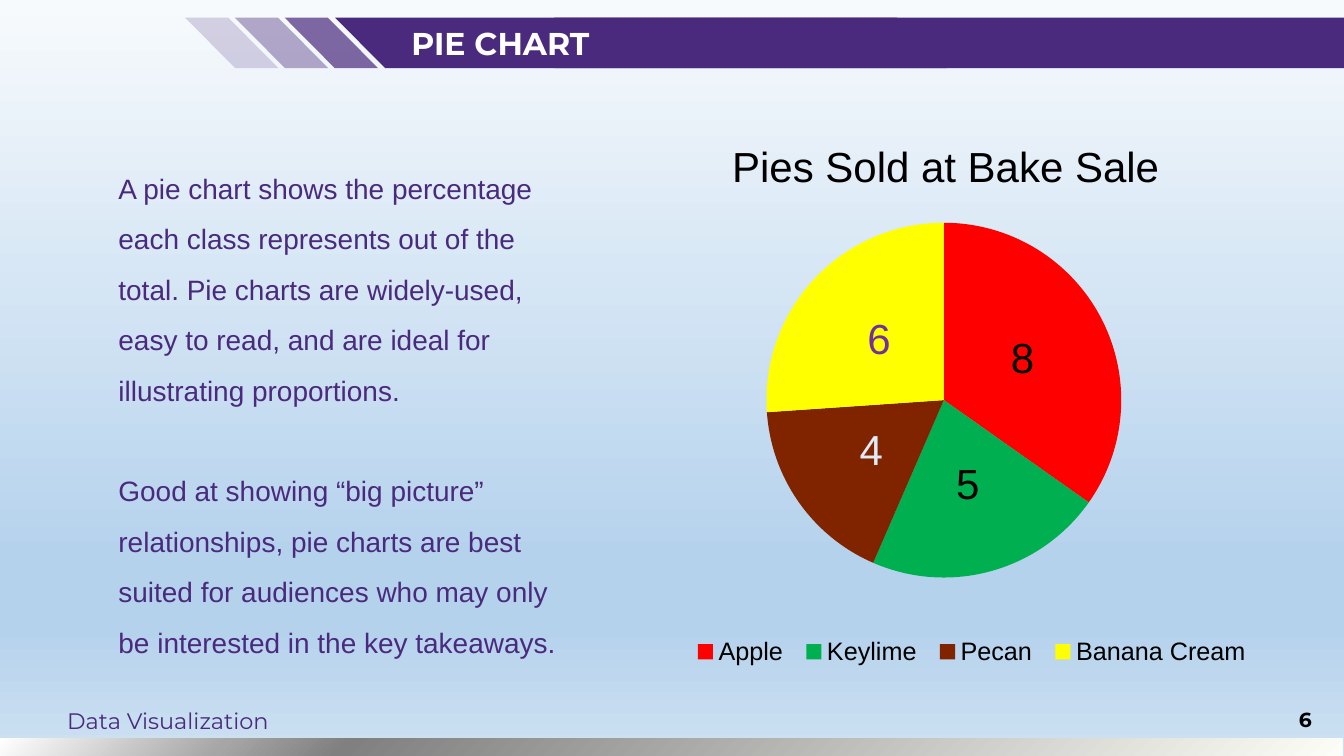
from lxml.etree import SubElement
from pptx import Presentation
from pptx.chart.data import CategoryChartData
from pptx.dml.color import RGBColor
from pptx.enum.chart import XL_CHART_TYPE, XL_LABEL_POSITION, XL_LEGEND_POSITION
from pptx.enum.shapes import MSO_SHAPE
from pptx.enum.text import MSO_ANCHOR, PP_ALIGN
from pptx.oxml import parse_xml
from pptx.oxml.ns import nsdecls, qn
from pptx.util import Cm, Pt

PURPLE = RGBColor(0x4A, 0x2A, 0x7C)
BLACK = RGBColor(0, 0, 0)
WHITE = RGBColor(0xFF, 0xFF, 0xFF)
RED = RGBColor(0xFF, 0, 0)
GREEN = RGBColor(0, 0xB0, 0x50)
BROWN = RGBColor(0x80, 0x24, 0)
YELLOW = RGBColor(0xFF, 0xFF, 0)
PALE_BLUE = RGBColor(0xDE, 0xEB, 0xF7)
VIOLET = RGBColor(0x70, 0x30, 0xA0)

TITLE = "PIE CHART"
FOOTER = "Data Visualization"
PAGE = "6"
BODY = [
    "A pie chart shows the percentage each class represents out of the total. "
    "Pie charts are widely-used, easy to read, and are ideal for illustrating proportions.",
    "Good at showing “big picture” relationships, pie charts are best suited for "
    "audiences who may only be interested in the key takeaways.",
]
CHART_TITLE = "Pies Sold at Bake Sale"
PIES = [
    ("Apple", 8, RED, BLACK),
    ("Keylime", 5, GREEN, BLACK),
    ("Pecan", 4, BROWN, PALE_BLUE),
    ("Banana Cream", 6, YELLOW, VIOLET),
]
SKY = [(0, "F7FAFD"), (74, "B5D2EC"), (83, "B5D2EC"), (100, "CEE1F2")]
SILVER = [(0, "FCFDF6"), (74, "808080"), (83, "A6A6A6"), (100, "FFFFFF")]
LINEAR = '<a:lin ang="5400000" scaled="0"/>'
CORNER = '<a:path path="circle"><a:fillToRect l="100000" t="100000"/></a:path>'
STRIPE_ALPHAS = [70, 40, 20]
STRIPE_LEFT, STRIPE_STEP = 14.35, 2.51
BAND_TOP, BAND_HEIGHT = 0.89, 2.54


def set_gradient(fill, props, stops, direction):
    fill.gradient()
    stop_xml = "".join(
        f'<a:gs pos="{pos * 1000}"><a:srgbClr val="{color}"/></a:gs>' for pos, color in stops
    )
    grad = parse_xml(
        f'<a:gradFill {nsdecls("a")} rotWithShape="1"><a:gsLst>{stop_xml}</a:gsLst>{direction}</a:gradFill>'
    )
    old = props.find(qn("a:gradFill"))
    props.replace(old, grad)


def add_block(s, preset, left, top, width, height, alpha=100):
    sp = s.shapes.add_shape(preset, Cm(left), Cm(top), Cm(width), Cm(height))
    sp.shadow.inherit = False
    sp.line.fill.background()
    sp.fill.solid()
    sp.fill.fore_color.rgb = PURPLE
    if alpha < 100:
        color = sp.fill._xPr.find(qn("a:solidFill"))[0]
        SubElement(color, qn("a:alpha")).set("val", str(alpha * 1000))
    if preset == MSO_SHAPE.PARALLELOGRAM:
        sp.adjustments[0] = 0.993
        sp.rotation = 180
        sp._element.spPr.find(qn("a:xfrm")).set("flipH", "1")
    return sp


def style_font(font, name, size, color, bold=False):
    font.name, font.size, font.bold = name, Pt(size), bold
    font.color.rgb = color


def add_text(s, box, texts, name, size, color, bold=False, inset=(0.61, 0.3),
             anchor=MSO_ANCHOR.MIDDLE, align=PP_ALIGN.LEFT, line=None):
    tf = s.shapes.add_textbox(*map(Cm, box)).text_frame
    tf.word_wrap = True
    tf.vertical_anchor = anchor
    tf.margin_left = tf.margin_right = Cm(inset[0])
    tf.margin_top = tf.margin_bottom = Cm(inset[1])
    for i, text in enumerate(texts):
        p = tf.add_paragraph() if i else tf.paragraphs[0]
        p.alignment = align
        if line:
            p.line_spacing = Pt(line)
            if i:
                p.space_before = Pt(line)
        r = p.add_run()
        r.text = text
        style_font(r.font, name, size, color, bold)


def set_layout(parent, before, box, inner=False):
    for old in parent.findall(qn("c:layout")):
        parent.remove(old)
    target = '<c:layoutTarget val="inner"/>' if inner else ""
    modes = '<c:xMode val="edge"/><c:yMode val="edge"/>'
    sizes = "".join(f'<c:{key} val="{val}"/>' for key, val in zip("xywh", box))
    layout = parse_xml(
        f'<c:layout {nsdecls("c")}><c:manualLayout>{target}{modes}{sizes}</c:manualLayout></c:layout>'
    )
    parent.find(qn(before)).addprevious(layout)


def add_pie(s):
    data = CategoryChartData()
    data.categories = [pie[0] for pie in PIES]
    data.add_series("Series 1", [pie[1] for pie in PIES])
    chart = s.shapes.add_chart(
        XL_CHART_TYPE.PIE, Cm(30.56), Cm(3.1), Cm(35.08), Cm(32.51), data
    ).chart
    style_font(chart.font, "Arial", 10, PURPLE)

    chart.has_title = True
    r = chart.chart_title.text_frame.paragraphs[0].add_run()
    r.text = CHART_TITLE
    style_font(r.font, "Arial", 60, BLACK)
    chart.chart_title.include_in_layout = False
    set_layout(chart.chart_title._element, "c:overlay", (0.17, 0.11))

    chart.has_legend = True
    legend = chart.legend
    legend.position = XL_LEGEND_POSITION.BOTTOM
    legend.include_in_layout = False
    style_font(legend.font, "Arial", 36, BLACK)
    set_layout(legend._element, "c:overlay", (0.11, 0.87, 0.83, 0.09))

    plot = chart.plots[0]
    plot.vary_by_categories = True
    set_layout(plot._element.getparent(), "c:pieChart", (0.22, 0.25, 0.53, 0.55), True)
    plot.has_data_labels = True
    plot.data_labels.show_value = True
    plot.data_labels.show_percentage = False
    series = plot.series[0]
    for i, (_, _, color, label_color) in enumerate(PIES):
        fill = series.points[i].format.fill
        fill.solid()
        fill.fore_color.rgb = color
        series.points[i].format.line.fill.background()
        label = series.points[i].data_label
        style_font(label.font, "Arial", 60, label_color)
        label.position = XL_LABEL_POSITION.CENTER
    labels = series.data_labels
    labels.show_value = True
    labels.show_percentage = False
    labels.position = XL_LABEL_POSITION.CENTER
    style_font(labels.font, "Arial", 60, BLACK)


def main():
    prs = Presentation()
    prs.slide_width, prs.slide_height = Cm(67.74), Cm(38.1)
    s = prs.slides.add_slide(prs.slide_layouts[6])
    fill = s.background.fill
    set_gradient(fill, fill._xPr, SKY, LINEAR)

    bar = add_block(s, MSO_SHAPE.RECTANGLE, -0.08, 37.21, 67.74, 0.89)
    set_gradient(bar.fill, bar._element.spPr, SILVER, CORNER)
    add_block(s, MSO_SHAPE.PARALLELOGRAM, 16.89, BAND_TOP, 30.84, BAND_HEIGHT)
    for i, alpha in enumerate(STRIPE_ALPHAS):
        add_block(s, MSO_SHAPE.PARALLELOGRAM, STRIPE_LEFT - i * STRIPE_STEP,
                  BAND_TOP, 4.7, BAND_HEIGHT, alpha)
    add_block(s, MSO_SHAPE.RECTANGLE, 27.94, BAND_TOP, 39.8, BAND_HEIGHT)

    add_pie(s)
    add_text(s, (2.77, 35.31, 49.96, 2.03), [FOOTER], "Montserrat", 32, PURPLE)
    add_text(s, (53.67, 35.26, 13.06, 2.03), [PAGE], "Montserrat", 29, BLACK, True,
             align=PP_ALIGN.RIGHT)
    add_text(s, (5.72, 7.67, 23.7, 25.58), BODY, "Arial", 40, PURPLE,
             inset=(0.25, 0.13), anchor=MSO_ANCHOR.TOP, line=72)
    add_text(s, (20.12, 0.89, 45.52, 2.41), [TITLE], "Montserrat", 45, WHITE, True,
             anchor=MSO_ANCHOR.TOP)
    prs.save("out.pptx")


if __name__ == "__main__":
    main()
